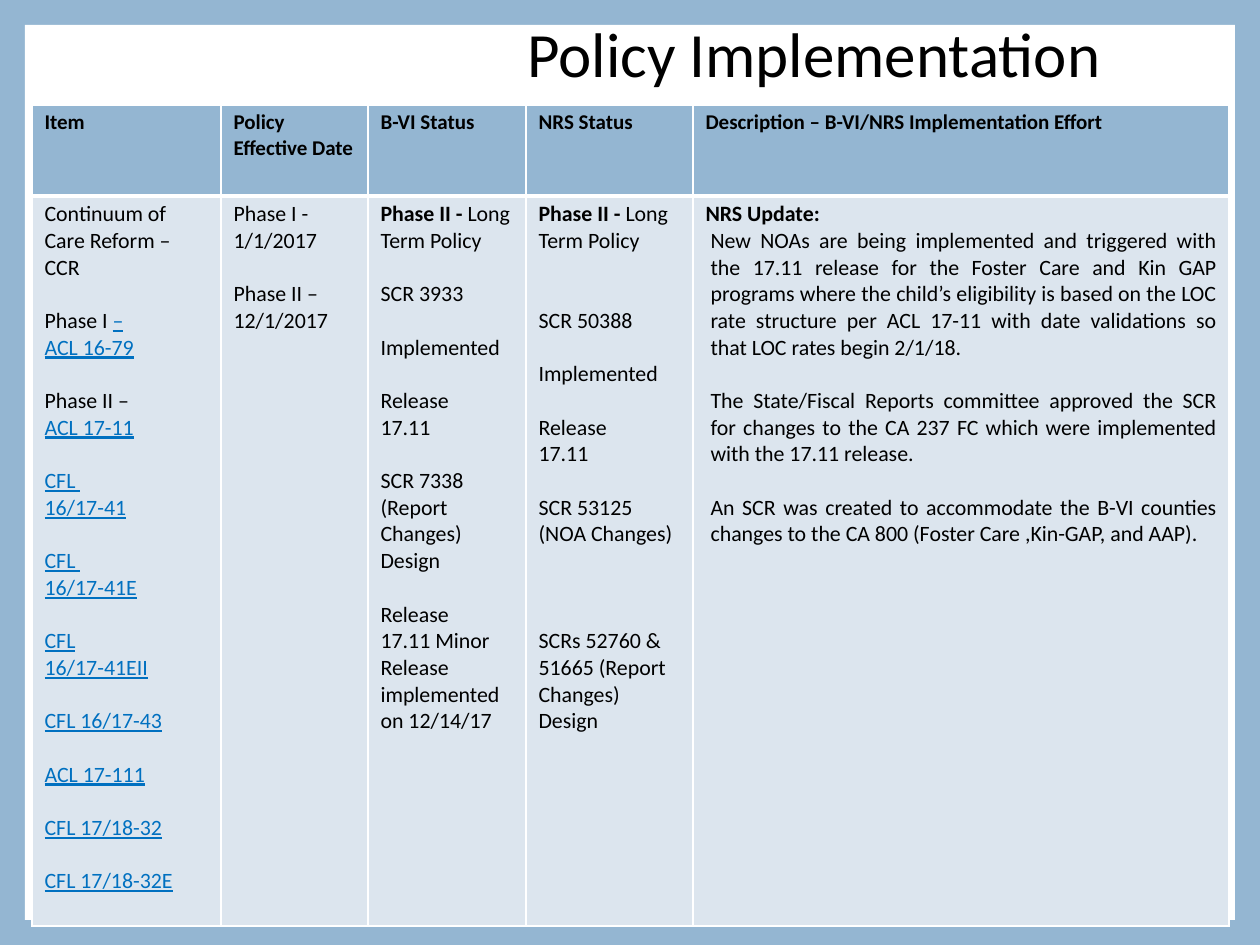
from lxml import etree
from pptx import Presentation
from pptx import util as u
from pptx.dml.color import RGBColor
from pptx.enum import shapes, text
from pptx.oxml.ns import qn

PX = 914400 / 126
BLUE = RGBColor(0x94, 0xB6, 0xD2)
PALE = RGBColor(0xDC, 0xE5, 0xEE)
LINK = RGBColor(0x00, 0x70, 0xC0)
WHITE = RGBColor(0xFF, 0xFF, 0xFF)
BLACK = RGBColor(0, 0, 0)

FONT = "Calibri"
HEAD_SIZE, BODY_SIZE = 12, 12.5
LINE = 15.25  # height of one body line in points

COLUMNS = (189, 147, 158, 167, 536)
ROWS = (91, 730)
HEADINGS = ("Item", "Policy Effective Date", "B-VI Status", "NRS Status",
            "Description – B-VI/NRS Implementation Effort")


def px(n):
    return u.Emu(round(n * PX))


def box(x, y, w, h):
    return px(x), px(y), px(w), px(h)


def para(*runs, gap=0, justify=False):
    """A paragraph: runs are (text, style) pairs, gap is in empty lines above."""
    return runs, gap, justify


def plain(words, gap=0):
    return para((words, ""), gap=gap)


def link(words, gap=0):
    return para((words, "link"), gap=gap)


def body(words, gap=0):
    return para((words, ""), gap=gap, justify=True)


PHASE = para(("Phase II - ", "bold"), ("Long Term Policy", ""))

ITEM = [
    plain("Continuum of Care Reform – CCR"),
    para(("Phase I ", ""), ("–", "link"), gap=1), link("ACL 16-79"),
    plain("Phase II –", 1), link("ACL 17-11"),
    link("CFL ", 1), link("16/17-41"),
    link("CFL ", 1), link("16/17-41E"),
    link("CFL", 1), link("16/17-41EII"),
    link("CFL 16/17-43", 1), link("ACL 17-111", 1),
    link("CFL 17/18-32", 1), link("CFL 17/18-32E", 1),
]
DATES = [plain("Phase I -"), plain("1/1/2017"),
         plain("Phase II –", 1), plain("12/1/2017")]
FIRST_STATUS = [
    PHASE, plain("SCR 3933", 1), plain("Implemented", 1),
    plain("Release", 1), plain("17.11"),
    plain("SCR 7338 (Report Changes)", 1), plain("Design"),
    plain("Release", 1),
    plain("17.11 Minor Release implemented on 12/14/17"),
]
SECOND_STATUS = [
    PHASE, plain("SCR 50388", 2), plain("Implemented", 1),
    plain("Release", 1), plain("17.11"),
    plain("SCR 53125", 1), plain("(NOA Changes)"),
    plain("SCRs 52760 & 51665 (Report Changes) Design", 3),
]
EFFORT = [
    para(("NRS Update:", "bold")),
    body("New NOAs are being implemented and triggered with the 17.11 release "
         "for the Foster Care and Kin GAP programs where the child’s "
         "eligibility is based on the LOC rate structure per ACL 17-11 with "
         "date validations so that LOC rates begin 2/1/18."),
    body("The State/Fiscal Reports committee approved the SCR for changes to "
         "the CA 237 FC which were implemented with the 17.11 release.", 1),
    body("An SCR was created to accommodate the B-VI counties changes to the "
         "CA 800 (Foster Care ,Kin-GAP, and AAP).", 1),
]


def add_run(p, words, size, style=""):
    r = p.add_run()
    r.text = words
    r.font.name = FONT
    r.font.size = u.Pt(size)
    r.font.bold = style == "bold"
    r.font.underline = style == "link"
    r.font.color.rgb = LINK if style == "link" else BLACK


def fill_cell(cell, paragraphs, size, color, borders):
    # Borders come before the fill in the cell properties
    props = cell._tc.get_or_add_tcPr()
    for side, width in zip("LRTB", borders):
        ln = etree.SubElement(props, qn("a:ln" + side), w=str(u.Pt(width)))
        solid = etree.SubElement(ln, qn("a:solidFill"))
        etree.SubElement(solid, qn("a:srgbClr"), val=str(WHITE))
    cell.fill.solid()
    cell.fill.fore_color.rgb = color
    cell.margin_top = cell.margin_bottom = px(5)

    tf = cell.text_frame
    for i, (runs, gap, justify) in enumerate(paragraphs):
        p = tf.add_paragraph() if i else tf.paragraphs[0]
        p.space_before = u.Pt(gap * LINE)
        p.alignment = text.PP_ALIGN.LEFT
        if justify:
            p.alignment = text.PP_ALIGN.JUSTIFY
            p._p.get_or_add_pPr().set("marL", str(px(5)))
        for words, style in runs:
            add_run(p, words, size, style)


def add_panel(s, x, y, w, h):
    s.background.fill.solid()
    s.background.fill.fore_color.rgb = BLUE
    sp = s.shapes.add_shape(shapes.MSO_SHAPE.RECTANGLE, *box(x, y, w, h))
    sp.shadow.inherit = False
    sp.fill.solid()
    sp.fill.fore_color.rgb = WHITE
    sp.line.fill.background()


def add_title(s, x, y, w, h):
    tf = s.shapes.add_textbox(*box(x, y, w, h)).text_frame
    tf.word_wrap = True
    tf.vertical_anchor = text.MSO_ANCHOR.MIDDLE
    p = tf.paragraphs[0]
    p.alignment = text.PP_ALIGN.RIGHT
    p.line_spacing = 0.9
    add_run(p, "Policy Implementation", 36)


def add_policy_table(s, x, y):
    frame = s.shapes.add_table(len(ROWS), len(COLUMNS),
                               *box(x, y, sum(COLUMNS), sum(ROWS)))
    table = frame.table
    table.horz_banding = False
    for column, width in zip(table.columns, COLUMNS):
        column.width = px(width)
    for row, height in zip(table.rows, ROWS):
        row.height = px(height)
    contents = (ITEM, DATES, FIRST_STATUS, SECOND_STATUS, EFFORT)
    for c, (heading, paragraphs) in enumerate(zip(HEADINGS, contents)):
        fill_cell(table.cell(0, c), [para((heading, "bold"))],
                  HEAD_SIZE, BLUE, (1, 1, 1, 3))
        fill_cell(table.cell(1, c), paragraphs,
                  BODY_SIZE, PALE, (1, 1, 3, 1))


def main():
    prs = Presentation()
    prs.slide_width, prs.slide_height = px(1260), px(945)
    s = prs.slides.add_slide(prs.slide_layouts[6])
    add_panel(s, 25, 25, 1210, 895)
    add_title(s, 63, 21, 1050, 73)
    add_policy_table(s, 32, 105)
    prs.save("out.pptx")


if __name__ == "__main__":
    main()
